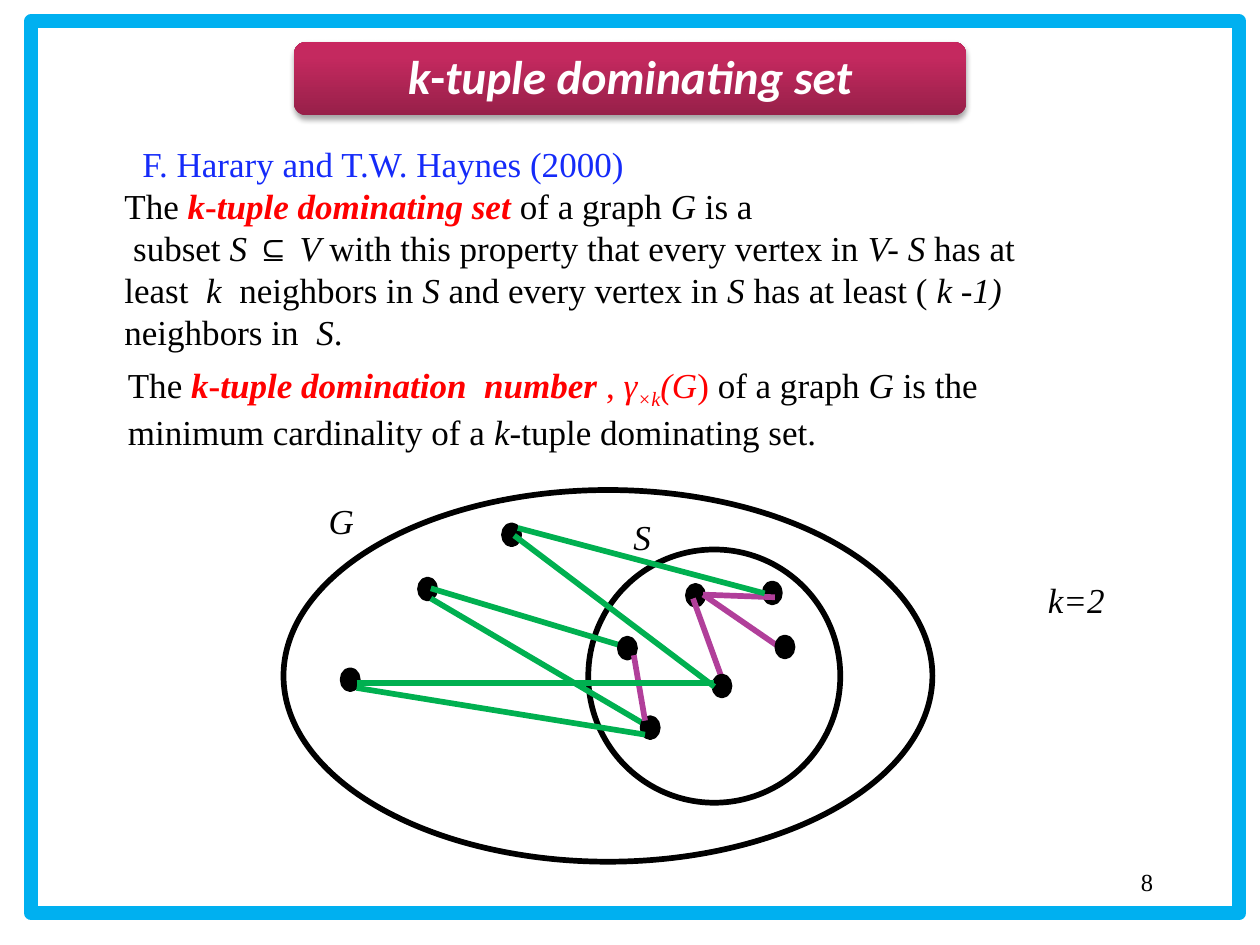
from typing import NamedTuple

from lxml import etree
from pptx import Presentation
from pptx.dml.color import RGBColor
from pptx.enum.shapes import MSO_CONNECTOR, MSO_SHAPE
from pptx.enum.text import MSO_ANCHOR, PP_ALIGN
from pptx.oxml import parse_xml
from pptx.oxml.ns import qn
from pptx.util import Pt

RECT, OVAL, ROUNDED = MSO_SHAPE.RECTANGLE, MSO_SHAPE.OVAL, MSO_SHAPE.ROUNDED_RECTANGLE
STRAIGHT = MSO_CONNECTOR.STRAIGHT
LEFT, CENTER, RIGHT = PP_ALIGN.LEFT, PP_ALIGN.CENTER, PP_ALIGN.RIGHT
TOP, MIDDLE = MSO_ANCHOR.TOP, MSO_ANCHOR.MIDDLE

COLORS = {
    "black": "000000", "white": "FFFFFF", "red": "FF0000", "blue": "152BF9",
    "frame": "00B0F0", "outer edge": "00B050", "inner edge": "B13F9A",
    "title dark": "972049", "title mid": "C4295F", "title light": "C8265F",
}
SERIF, SANS = "Times New Roman", "Calibri"
STROKE = 3.25
VERTEX_WIDTH, VERTEX_HEIGHT = 8.64, 10.8
LINE_PITCH = 24
DRAWING_NS = "http://schemas.openxmlformats.org/drawingml/2006/main"


class Box(NamedTuple):
    left: float
    top: float
    width: float
    height: float


class Style(NamedTuple):
    color: str = "black"
    bold: bool = False
    italic: bool = False
    size: float = 20
    face: str = SERIF
    baseline: int = 0


class Edge(NamedTuple):
    kind: str
    x1: float
    y1: float
    x2: float
    y2: float


class Label(NamedTuple):
    box: Box
    text: str
    style: Style
    align: PP_ALIGN


PLAIN, ITALIC = Style(), Style(italic=True)
TERM, TERM_HYPHEN = Style("red", True, True), Style("red", True)
RED, RED_ITALIC = Style("red"), Style("red", italic=True)
SUBSCRIPT = Style("red", italic=True, baseline=-25000)
TITLE = Style("white", True, True, 27, SANS)

Paragraph = list[tuple[str, Style]]


def rgb(name: str) -> RGBColor:
    return RGBColor.from_string(COLORS[name])


def write(shape, paragraphs: list[Paragraph], align=LEFT, anchor=TOP,
          inset_x=7.2, inset_top=3.6, inset_bottom=3.6, **spacing) -> None:
    frame = shape.text_frame
    frame_format = {
        "word_wrap": True, "vertical_anchor": anchor,
        "margin_left": Pt(inset_x), "margin_right": Pt(inset_x),
        "margin_top": Pt(inset_top), "margin_bottom": Pt(inset_bottom),
    }
    for name, value in frame_format.items():
        setattr(frame, name, value)
    for index, runs in enumerate(paragraphs):
        paragraph = frame.add_paragraph() if index else frame.paragraphs[0]
        for name, value in {"alignment": align, **spacing}.items():
            setattr(paragraph, name, value)
        for text, style in runs:
            run = paragraph.add_run()
            run.text = text
            font_format = {"name": style.face, "size": Pt(style.size),
                           "bold": style.bold, "italic": style.italic}
            for name, value in font_format.items():
                setattr(run.font, name, value)
            run.font.color.rgb = rgb(style.color)
            if style.baseline:
                run.font._element.set("baseline", str(style.baseline))


def add_text(slide, box: Box, paragraphs: list[Paragraph], **layout) -> None:
    write(slide.shapes.add_textbox(*map(Pt, box)), paragraphs, **layout)


def add_outline(slide, kind, box: Box, line: str, width: float, fill: str = ""):
    shape = slide.shapes.add_shape(kind, *map(Pt, box))
    shape.shadow.inherit = False
    if fill:
        shape.fill.solid()
        shape.fill.fore_color.rgb = rgb(fill)
    else:
        shape.fill.background()
    shape.line.color.rgb = rgb(line)
    shape.line.width = Pt(width)


def add_edge(slide, edge: Edge) -> None:
    line = slide.shapes.add_connector(STRAIGHT, *map(Pt, edge[1:]))
    line.line.color.rgb = rgb(edge.kind)
    line.line.width = Pt(STROKE)
    etree.SubElement(line._element.spPr, qn("a:effectLst"))


def add_title(slide, box: Box, runs: Paragraph) -> None:
    banner = slide.shapes.add_shape(ROUNDED, *map(Pt, box))
    banner.shadow.inherit = False
    banner.fill.background()
    banner.line.fill.background()
    properties = banner._element.spPr
    # Three-stop gradient, dark at the bottom
    stops = "".join(
        f'<a:gs pos="{position * 1000}"><a:srgbClr val="{COLORS[name]}"/></a:gs>'
        for position, name in ((0, "title dark"), (80, "title mid"), (100, "title light")))
    properties.replace(properties.find(qn("a:noFill")), parse_xml(
        f'<a:gradFill xmlns:a="{DRAWING_NS}" rotWithShape="1"><a:gsLst>{stops}</a:gsLst>'
        '<a:lin ang="16200000" scaled="0"/></a:gradFill>'))
    # Soft shadow below
    properties.find(qn("a:effectLst")).append(parse_xml(
        f'<a:outerShdw xmlns:a="{DRAWING_NS}" blurRad="{Pt(3.1)}" dist="{Pt(1.8)}" '
        f'dir="5400000" rotWithShape="0"><a:srgbClr val="{COLORS["black"]}">'
        '<a:alpha val="35000"/></a:srgbClr></a:outerShdw>'))
    write(banner, [runs], CENTER, MIDDLE, 8, 4, 4, line_spacing=0.9)


DEFINITION = [
    [("The ", PLAIN), ("k", TERM), ("-", TERM_HYPHEN), ("tuple dominating set ", TERM),
     ("of a graph ", PLAIN), ("G ", ITALIC), ("is a", PLAIN)],
    [(" subset ", PLAIN), ("S ⊆ V ", ITALIC),
     ("with this property that every vertex in ", PLAIN), ("V- S ", ITALIC),
     ("has at", PLAIN)],
    [("least  ", PLAIN), ("k  ", ITALIC), ("neighbors in ", PLAIN), ("S ", ITALIC),
     ("and every vertex in ", PLAIN), ("S ", ITALIC), ("has at least ( ", PLAIN),
     ("k -1) ", ITALIC), ("neighbors in  ", PLAIN), ("S", ITALIC), (".", PLAIN)],
]
DOMINATION_NUMBER = [
    [("The ", PLAIN), ("k", TERM), ("-", TERM_HYPHEN), ("tuple domination  number ", TERM),
     (", ", RED), ("γ", RED_ITALIC), ("×k", SUBSCRIPT), ("(", RED_ITALIC),
     ("G", RED_ITALIC), (") ", RED), ("of a graph ", PLAIN), ("G ", ITALIC),
     ("is the minimum cardinality of a ", PLAIN), ("k", ITALIC),
     ("-tuple dominating set.", PLAIN)],
]
LABELS = [
    Label(Box(516, 492, 150, 36), "8", Style(size=14), RIGHT),
    Label(Box(174, 282, 42, 31.5), "G", ITALIC, CENTER),
    Label(Box(343, 291, 48, 31.5), "S", ITALIC, CENTER),
    Label(Box(588, 327, 54, 31.5), "k=2", ITALIC, CENTER),
    Label(Box(60, 78, 318, 31.5), "F. Harary and T.W. Haynes (2000)", Style("blue"), CENTER),
]
# Each layer: top-left corners of vertices, then the edges drawn over them
GRAPH_LAYERS = [
    ([(240, 331.2), (393.1, 334.8), (437, 333.4)],
     [Edge("inner edge", 401.8, 339.8, 450, 373),
      Edge("outer edge", 246.2, 342, 375.8, 418.3),
      Edge("inner edge", 396, 342, 414, 391.7),
      Edge("outer edge", 246.2, 336.2, 363.6, 371.5),
      Edge("inner edge", 401.8, 339.8, 442.8, 341.3)]),
    ([(354.2, 365), (195.8, 383), (367.2, 410.4), (444.2, 364.3), (408.2, 386.6),
      (288, 300.2)],
     [Edge("inner edge", 362.2, 374.4, 368.6, 411.8),
      Edge("outer edge", 293.8, 306, 408.2, 392.4),
      Edge("outer edge", 203.8, 393.1, 368.6, 419.8),
      Edge("outer edge", 295.9, 301.7, 437, 339.1),
      Edge("outer edge", 203.8, 390.2, 408.2, 390.2)]),
]


def main() -> None:
    deck = Presentation()
    deck.slide_width, deck.slide_height = Pt(720), Pt(540)
    slide = deck.slides.add_slide(deck.slide_layouts[6])

    # Frame, graph G and its subset S
    add_outline(slide, RECT, Box(18, 12, 690, 510), "frame", 8)
    add_outline(slide, OVAL, Box(162, 280, 370.8, 212.4), "black", STROKE)
    add_outline(slide, OVAL, Box(336.2, 314, 144, 144.7), "black", STROKE)

    # Vertices and edges
    for vertices, edges in GRAPH_LAYERS:
        for left, top in vertices:
            vertex = Box(left, top, VERTEX_WIDTH, VERTEX_HEIGHT)
            add_outline(slide, OVAL, vertex, "black", STROKE, "black")
        for edge in edges:
            add_edge(slide, edge)

    # Title, definitions and labels
    add_title(slide, Box(168, 24, 384, 42),
              [("k", TITLE), ("-", TITLE._replace(italic=False)),
               ("tuple dominating set", TITLE)])
    add_text(slide, Box(64, 78, 558, 128), DEFINITION,
             inset_top=3.6 + LINE_PITCH, line_spacing=Pt(LINE_PITCH))
    add_text(slide, Box(66, 204, 558, 55.4), DOMINATION_NUMBER)
    for label in LABELS:
        add_text(slide, label.box, [[(label.text, label.style)]], align=label.align)

    deck.save("out.pptx")


if __name__ == "__main__":
    main()
